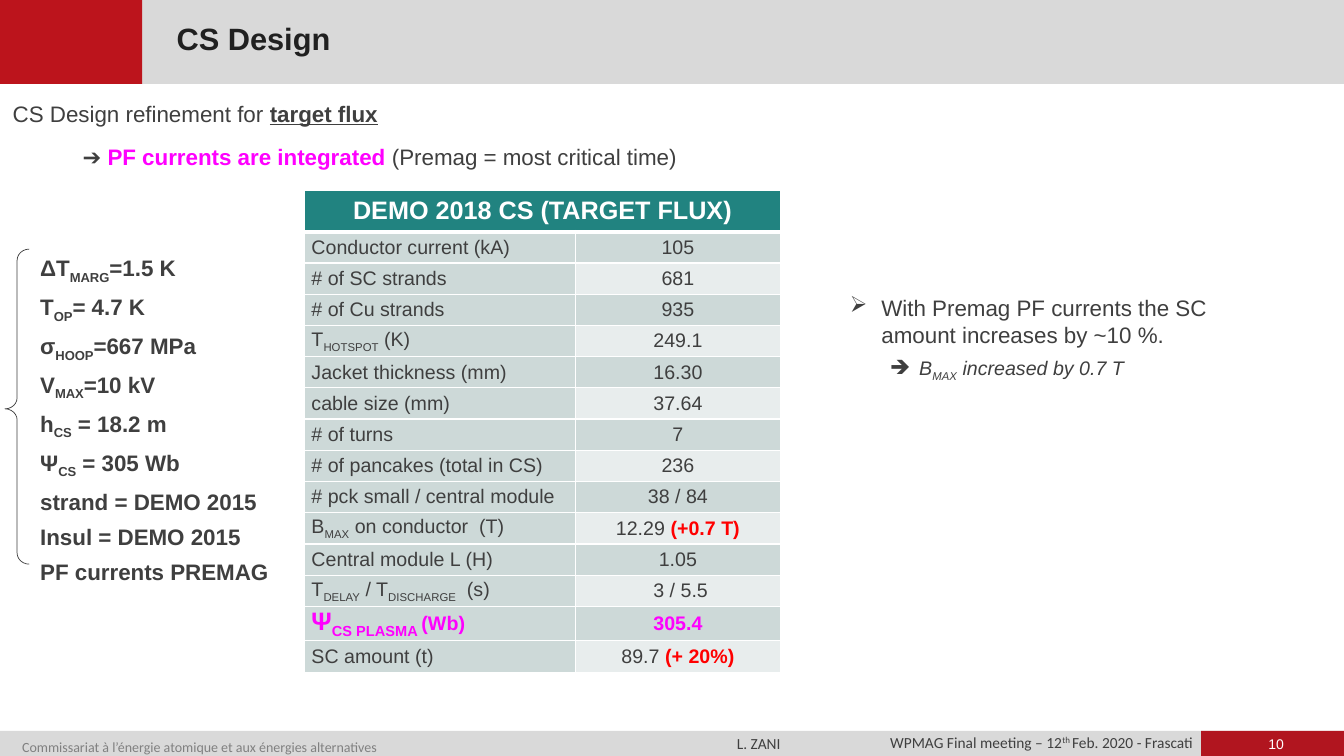
from lxml.etree import SubElement
from pptx import Presentation
from pptx.dml.color import RGBColor
from pptx.enum.shapes import MSO_SHAPE
from pptx.enum.text import MSO_ANCHOR, PP_ALIGN
from pptx.oxml.ns import qn
from pptx.util import Pt

WIDTH, HEIGHT = 960, 540
TEXT, WHITE, GREY, RED = "3F3F3F", "FFFFFF", "D9D9D9", "FF0000"
MAGENTA, TEAL, BAND_DARK, BAND_LIGHT = "FF00FF", "218380", "CDD9D8", "E8EDED"
BORDER_TAGS = ("a:lnL", "a:lnR", "a:lnT", "a:lnB")


def color(hex_value):
    return RGBColor.from_string(hex_value)


def sub(text, **style):
    return text, {"base": -25, **style}


def write(paragraph, pieces, size=16, font="Arial", fill=TEXT, bold=False, italic=False,
          align=PP_ALIGN.LEFT, before=0, spacing=None, indent=0, hanging=0, bullet=None, level=0):
    """Fill a paragraph with pieces: plain strings, or (string, style overrides) pairs."""
    paragraph.level = level
    properties = paragraph._p.get_or_add_pPr()
    properties.set("marL", str(Pt(indent)))
    properties.set("indent", str(Pt(-hanging)))
    paragraph.alignment = align
    paragraph.space_before = Pt(before)
    if spacing:
        paragraph.line_spacing = spacing
    if bullet:
        SubElement(properties, qn("a:buChar")).set("char", bullet)
    for piece in [pieces] if isinstance(pieces, str) else pieces:
        text, style = (piece, {}) if isinstance(piece, str) else piece
        run = paragraph.add_run()
        run.text = text
        run.font.name = font
        run.font.size = Pt(style.get("size", size))
        run.font.bold = style.get("bold", bold)
        run.font.italic = italic
        run.font.underline = style.get("underline", False)
        run.font.color.rgb = color(style.get("fill", fill))
        if "base" in style:
            run._r.get_or_add_rPr().set("baseline", str(style["base"] * 1000))


def place(shape, box):
    shape.left, shape.top, shape.width, shape.height = map(Pt, box)


def set_margins(frame, horizontal, vertical):
    frame.margin_left = frame.margin_right = Pt(horizontal)
    frame.margin_top = frame.margin_bottom = Pt(vertical)


def add_text(slide, box, paragraphs, margins=(7.2, 3.6), wrap=True):
    """Add a text box; each paragraph is a (pieces, format) pair."""
    frame = slide.shapes.add_textbox(*map(Pt, box)).text_frame
    frame.word_wrap = wrap
    set_margins(frame, *margins)
    for index, (pieces, style) in enumerate(paragraphs):
        paragraph = frame.add_paragraph() if index else frame.paragraphs[0]
        write(paragraph, pieces, **style)


def add_bar(slide, box, fill):
    bar = slide.shapes.add_shape(MSO_SHAPE.RECTANGLE, *map(Pt, box))
    bar.shadow.inherit = False
    bar.fill.solid()
    bar.fill.fore_color.rgb = color(fill)
    bar.line.fill.background()


def add_header(slide, box):
    left, top, width, height = box
    add_bar(slide, box, GREY)
    add_bar(slide, (left, top, 101.5, height), "BC141C")
    title = slide.shapes.title
    title.element.getparent().append(title.element)  # bring in front of the bars
    place(title, (left + 116, top + 15, 461.5, 29.5))
    title.text_frame.vertical_anchor = MSO_ANCHOR.MIDDLE
    set_margins(title.text_frame, 10.2, 3.6)
    write(title.text_frame.paragraphs[0], "CS Design", size=22, fill="202020", bold=True, spacing=0.8)


def add_footer(slide, box):
    left, top, width, height = box
    number_width = 102
    add_bar(slide, box, GREY)
    add_bar(slide, (left + width - number_width, top, number_width, height), "B1151F")
    event = ["WPMAG Final meeting – 12", ("th ", {"base": 30}), "Feb. 2020 - Frascati"]
    entries = [
        (10, 1, 434, "Commissariat à l’énergie atomique et aux énergies alternatives",
         dict(size=10, font="Calibri", fill="808080", spacing=1.4)),
        (520.5, 2.5, 43, "L. ZANI", dict(size=11, font="Calibri")),
        (617.5, 3, 240.5, event,
         dict(size=11, font="Calibri", align=PP_ALIGN.RIGHT, spacing=0.9)),
        (878.5, 3, 66, "10", dict(size=10, fill=WHITE, align=PP_ALIGN.CENTER)),
    ]
    for x, y, entry_width, pieces, style in entries:
        add_text(slide, (left + x, top + y, entry_width, 13), [(pieces, style)],
                 margins=(5.8, 0), wrap=pieces != "L. ZANI")


def add_introduction(slide, box):
    add_text(slide, box, [
        (["CS Design refinement for ", ("target flux", {"bold": True, "underline": True})],
         dict(spacing=Pt(25))),
        (["➔ ", ("PF currents are integrated ", {"fill": MAGENTA, "bold": True}),
          "(Premag = most critical time)"], dict(spacing=Pt(25), before=6, indent=50)),
    ])


def add_assumptions(slide, box):
    left, top, width, height = box
    brace = slide.shapes.add_shape(MSO_SHAPE.LEFT_BRACE, *map(Pt, (left, top, 17.3, height)))
    brace.shadow.inherit = False
    brace.adjustments[0], brace.adjustments[1] = 0.46, 0.507
    brace.fill.background()
    brace.line.color.rgb = color(TEXT)
    brace.line.width = Pt(0.5)
    assumptions = [
        ["ΔT", sub("MARG"), "=1.5 K"],
        ["T", sub("OP"), "= 4.7 K"],
        ["σ", sub("HOOP"), "=667 MPa"],
        ["V", sub("MAX"), "=10 kV"],
        ["h", sub("CS"), " = 18.2 m"],
        ["Ψ", sub("CS"), " = 305 Wb"],
        "strand = DEMO 2015",
        "Insul = DEMO 2015",
        "PF currents PREMAG",
    ]
    add_text(slide, (left + 18, top, width - 18, height),
             [(line, dict(bold=True, before=6 if index else 0))
              for index, line in enumerate(assumptions)])


def format_cell(cell, fill, margin, bottom=1, top=1):
    properties = cell._tc.get_or_add_tcPr()
    for tag, width in zip(BORDER_TAGS, (1, 1, top, bottom)):
        border = SubElement(properties, qn(tag), w=str(Pt(width)))
        SubElement(SubElement(border, qn("a:solidFill")), qn("a:srgbClr")).set("val", WHITE)
    cell.fill.solid()
    cell.fill.fore_color.rgb = color(fill)
    cell.vertical_anchor = MSO_ANCHOR.MIDDLE
    set_margins(cell, margin, 0)


def add_parameters(slide, box):
    highlight = dict(fill=MAGENTA, bold=True)
    change = dict(fill=RED, bold=True)
    parameters = [
        ("Conductor current (kA)", "105"),
        ("# of SC strands", "681"),
        ("# of Cu strands", "935"),
        (["T", sub("HOTSPOT"), " (K)"], "249.1"),
        ("Jacket thickness (mm)", "16.30"),
        ("cable size (mm)", "37.64"),
        ("# of turns", "7"),
        ("# of pancakes (total in CS)", "236"),
        ("# pck small / central module", "38 / 84"),
        (["B", sub("MAX"), " on conductor  (T)"], ["12.29 ", ("(+0.7 T)", change)]),
        ("Central module L (H)", "1.05"),
        (["T", sub("DELAY"), " / T", sub("DISCHARGE"), "  (s)"], " 3 / 5.5"),
        ([("Ψ", dict(size=18, **highlight)), sub("CS PLASMA ", size=18, **highlight),
          ("(Wb)", highlight)], [("305.4", highlight)]),
        ("SC amount (t)", ["89.7 ", ("(+ 20%)", change)]),
    ]
    left, top, width, height = box
    heading_height, name_width = 29.5, 193.5
    table = slide.shapes.add_table(len(parameters) + 1, 2, *map(Pt, box)).table
    table.columns[0].width, table.columns[1].width = Pt(name_width), Pt(width - name_width)
    for row in table.rows:
        row.height = Pt((height - heading_height) / len(parameters))
    table.rows[0].height = Pt(heading_height)

    heading = table.cell(0, 0)
    heading.merge(table.cell(0, 1))
    for column in range(2):
        format_cell(table.cell(0, column), TEAL, 5, bottom=3)
    write(heading.text_frame.paragraphs[0], "DEMO 2018 CS (TARGET FLUX)",
          size=18, fill=WHITE, bold=True, align=PP_ALIGN.CENTER)

    for index, (name, value) in enumerate(parameters, start=1):
        name_cell, value_cell = table.cell(index, 0), table.cell(index, 1)
        top_border = 3 if index == 1 else 1
        format_cell(name_cell, BAND_DARK, 5, top=top_border)
        format_cell(value_cell, BAND_DARK if index % 2 else BAND_LIGHT, 0, top=top_border)
        write(name_cell.text_frame.paragraphs[0], name, size=14)
        write(value_cell.text_frame.paragraphs[0], value, size=14, align=PP_ALIGN.CENTER)


def add_findings(slide, box):
    add_text(slide, box, [
        ("With Premag PF currents the SC amount increases by ~10 %.",
         dict(indent=22.5, hanging=22.5, bullet="➢")),
        (["B", sub("MAX"), " increased by 0.7 T"],
         dict(size=14, italic=True, before=6, indent=49.5, hanging=21, bullet="➔", level=1)),
    ])


def main():
    presentation = Presentation()
    presentation.slide_width, presentation.slide_height = Pt(WIDTH), Pt(HEIGHT)
    slide = presentation.slides.add_slide(presentation.slide_layouts[5])
    add_header(slide, (0, 0, WIDTH, 60))
    add_footer(slide, (0, 522, WIDTH, 18))
    add_introduction(slide, (2, 62, 703, 64))
    add_parameters(slide, (217.5, 136, 340, 342))
    add_findings(slide, (600, 206.5, 314.5, 108))
    add_assumptions(slide, (3.6, 178, 208, 225))
    presentation.save("out.pptx")


if __name__ == "__main__":
    main()
